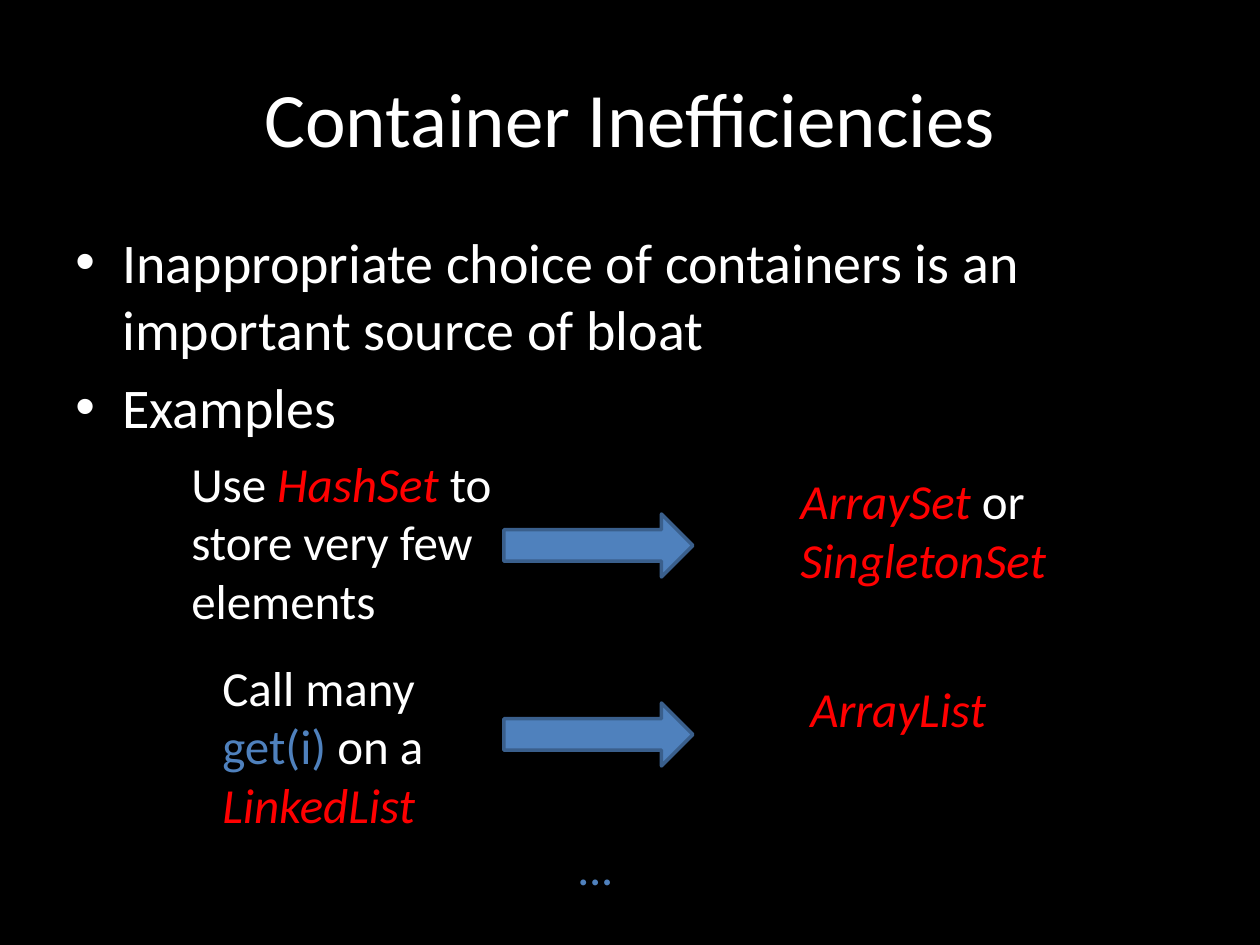
from typing import NamedTuple

from pptx import Presentation
from pptx import util as u
from pptx.dml.color import RGBColor
from pptx.enum import shapes, text
from pptx.oxml import ns, xmlchemy

PX = u.Inches(1) / 126
FONT = "Calibri"
COLORS = {
    "background": "000000",
    "plain": "FFFFFF",
    "container": "FF0000",
    "accent": "4F81BD",
    "arrow_edge": "3A5F8C",
}


class Words(NamedTuple):
    wording: str
    color: str = "plain"
    italic: bool = False


class Box(NamedTuple):
    left: int
    top: int
    width: int
    height: int


class Note(NamedTuple):
    box: Box
    words: list[Words]
    indent: int = 0


def px(length: int) -> u.Emu:
    return u.Emu(round(length * PX))


def emu(box: Box) -> list[u.Emu]:
    return [px(length) for length in box]


def rgb(name: str) -> RGBColor:
    return RGBColor.from_string(COLORS[name])


def container(wording: str) -> Words:
    return Words(wording, "container", True)


def add_words(paragraph, words: list[Words], size: int) -> None:
    for part in words:
        run = paragraph.add_run()
        run.text = part.wording
        run.font.name = FONT
        run.font.size = u.Pt(size)
        run.font.italic = part.italic
        run.font.color.rgb = rgb(part.color)


def add_frame(slide, box: Box):
    frame = slide.shapes.add_textbox(*emu(box)).text_frame
    frame.word_wrap = True
    return frame


def add_title(slide, box: Box, wording: str) -> None:
    title = slide.shapes.title
    title.left, title.top, title.width, title.height = emu(box)
    title.text_frame.vertical_anchor = text.MSO_ANCHOR.MIDDLE
    heading = title.text_frame.paragraphs[0]
    heading.alignment = text.PP_ALIGN.CENTER
    add_words(heading, [Words(wording)], 44)


def add_bullets(slide, box: Box, points: list[str], hang: int) -> None:
    frame = add_frame(slide, box)
    for index, point in enumerate(points):
        paragraph = frame.add_paragraph() if index else frame.paragraphs[0]
        paragraph.space_before = u.Pt(6.4)
        add_words(paragraph, [Words(point)], 32)
        properties = paragraph._p.get_or_add_pPr()
        properties.set("marL", str(px(hang)))
        properties.set("indent", str(-px(hang)))
        for tag, key, setting in (("a:buFont", "typeface", "Arial"),
                                  ("a:buChar", "char", "•")):
            bullet = xmlchemy.OxmlElement(tag)
            bullet.set(key, setting)
            properties.append(bullet)


def add_note(slide, note: Note) -> None:
    frame = add_frame(slide, note.box)
    frame.auto_size = text.MSO_AUTO_SIZE.SHAPE_TO_FIT_TEXT
    paragraph = frame.paragraphs[0]
    if note.indent:
        paragraph.level = 1
        paragraph._p.get_or_add_pPr().set("marL", str(px(note.indent)))
    add_words(paragraph, note.words, 28)


def add_arrow(slide, box: Box) -> None:
    arrow = slide.shapes.add_shape(shapes.MSO_SHAPE.RIGHT_ARROW, *emu(box))
    arrow.shadow.inherit = False
    arrow.fill.solid()
    arrow.fill.fore_color.rgb = rgb("accent")
    arrow.line.color.rgb = rgb("arrow_edge")
    arrow.line.width = u.Pt(2)


# Inefficient uses, their replacements, and the closing ellipsis
NOTES = [
    Note(Box(116, 447, 388, 190),
         [Words("Use "), container("HashSet "),
          Words("to store very few elements")], 63),
    Note(Box(788, 464, 315, 131),
         [container("ArraySet "), Words("or "), container("SingletonSet")]),
    Note(Box(147, 651, 325, 190),
         [Words("Call many "), Words("get(i) ", "accent"),
          Words("on a "), container("LinkedList")], 63),
    Note(Box(798, 672, 315, 72), [container("ArrayList")]),
    Note(Box(567, 830, 315, 72), [Words("…", "accent", True)]),
]
ARROW_TOPS = (514, 703)


def main() -> None:
    deck = Presentation()
    deck.slide_width, deck.slide_height = px(1260), px(945)
    slide = deck.slides.add_slide(deck.slide_layouts[5])
    slide.background.fill.solid()
    slide.background.fill.fore_color.rgb = rgb("background")

    # Heading and main points
    add_title(slide, Box(63, 38, 1134, 158), "Container Inefficiencies")
    add_bullets(slide, Box(63, 221, 1134, 624), [
        "Inappropriate choice of containers is an important source of bloat",
        "Examples",
    ], hang=47)

    # Examples with arrows to the better choice
    for note in NOTES:
        add_note(slide, note)
    for top in ARROW_TOPS:
        add_arrow(slide, Box(504, top, 189, 63))

    deck.save("out.pptx")


if __name__ == "__main__":
    main()
